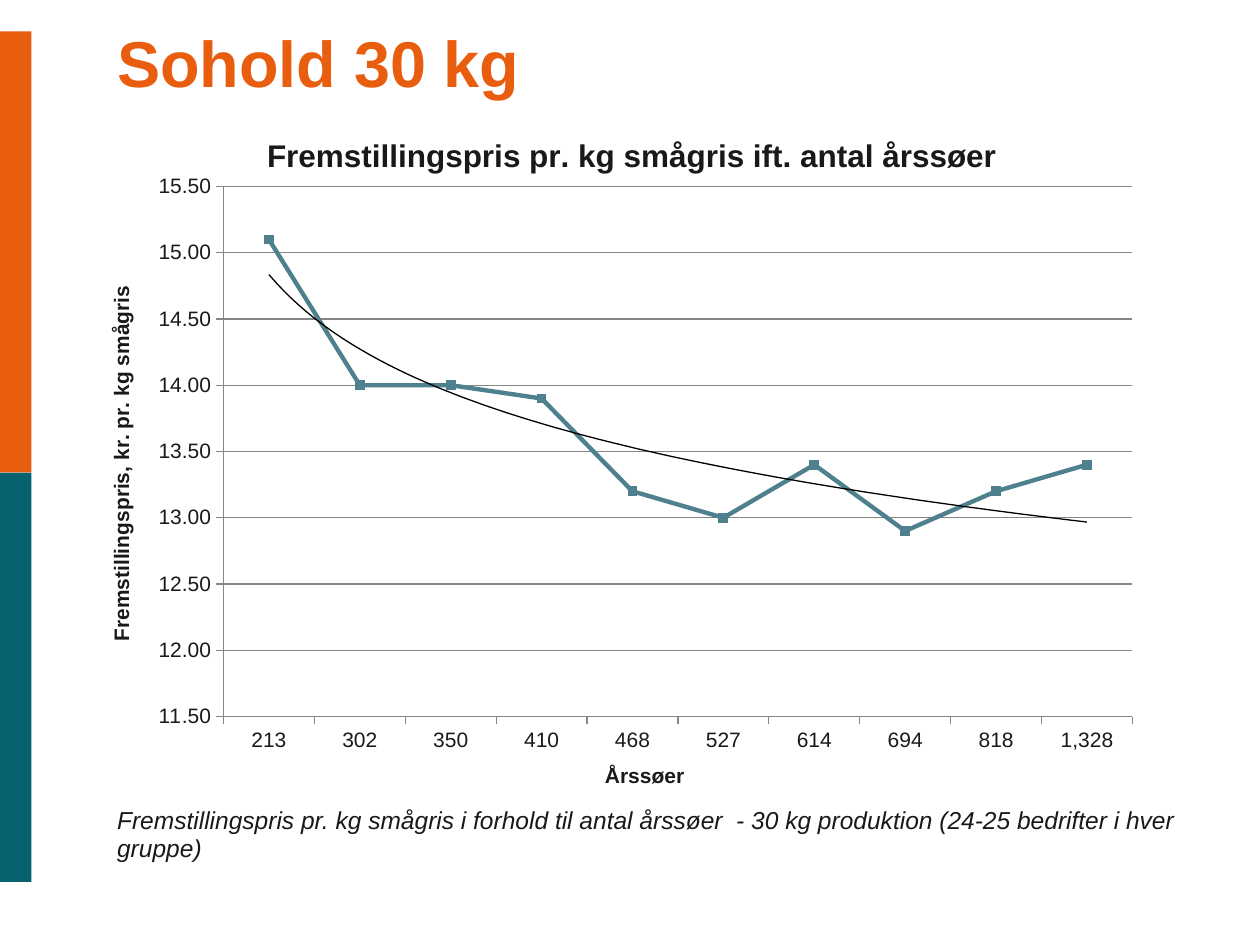
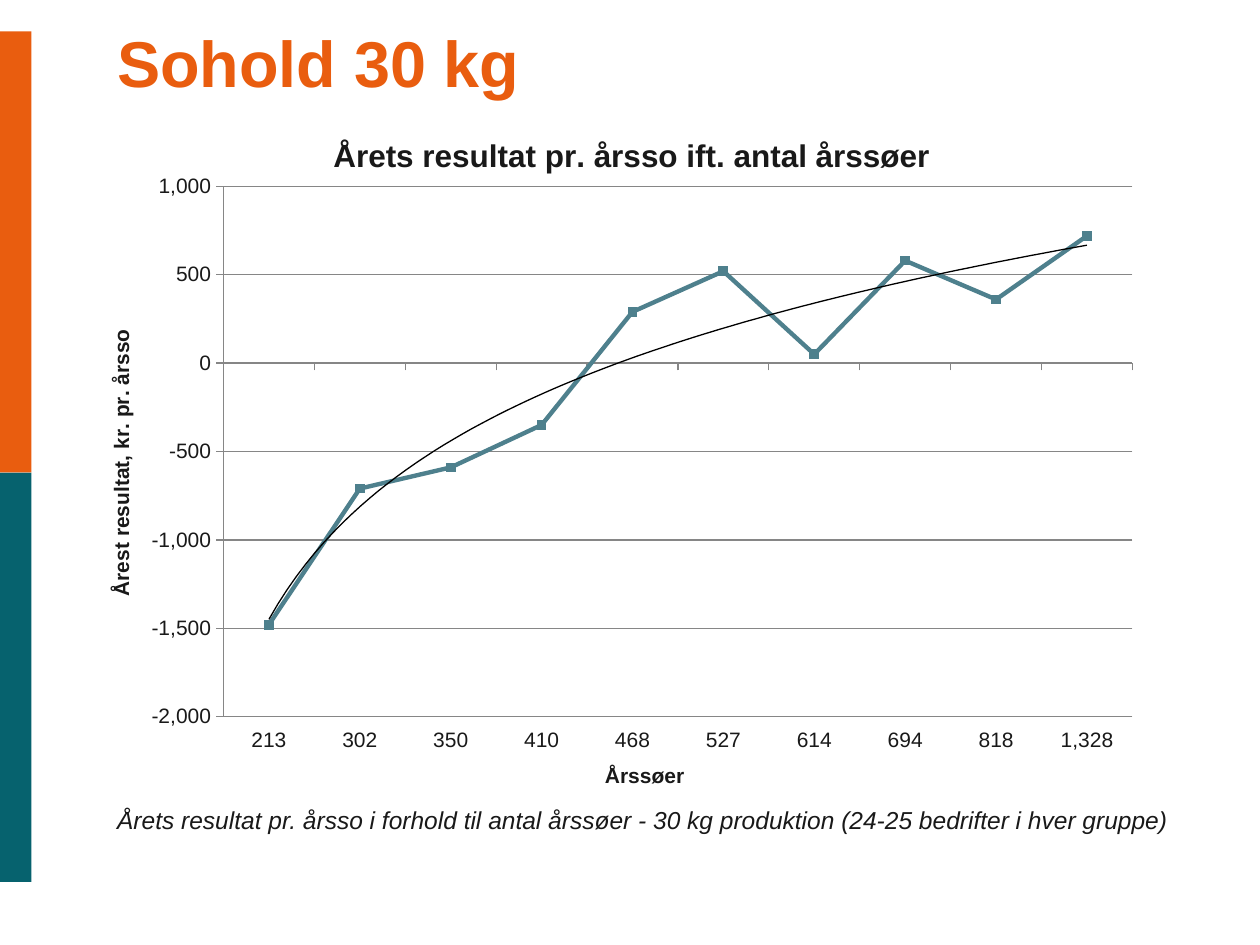
from lxml import etree
from pptx import Presentation
from pptx import util as u
from pptx.chart.data import CategoryChartData
from pptx.dml.color import RGBColor
from pptx.enum import chart as ch, shapes, text
from pptx.oxml import parse_xml
from pptx.oxml.ns import nsdecls, qn

COLORS = {"orange": "E95D0F", "teal": "06626E", "ink": "191919",
          "series": "4E808D", "grid": "868686", "trend": "000000"}
FONT = "Arial"
WIDTH, HEIGHT = u.Inches(10), u.Inches(7.5)
LEFT = 0.093
YEAR_SOWS = ["213", "302", "350", "410", "468", "527", "614", "694", "818", "1,328"]
SLIDES = [
    dict(heading="Fremstillingspris pr. kg smågris ift. antal årssøer", heading_left=0.149,
         value_title="Fremstillingspris, kr. pr. kg smågris", value_title_top=0.261,
         values=[15.1, 14, 14, 13.9, 13.2, 13, 13.4, 12.9, 13.2, 13.4],
         scale=(11.5, 15.5, 0.5), number_format="0.00",
         caption="Fremstillingspris pr. kg smågris i forhold til antal årssøer  "
                 "- 30 kg produktion (24-25 bedrifter i hver gruppe)"),
    dict(heading="Årets resultat pr. årsso ift. antal årssøer", heading_left=0.212,
         value_title="Årest resultat, kr. pr. årsso", value_title_top=0.324,
         values=[-1480, -710, -590, -350, 290, 520, 50, 580, 360, 720],
         scale=(-2000, 1000, 500), number_format="#,##0",
         caption="Årets resultat pr. årsso i forhold til antal årssøer "
                 "- 30 kg produktion (24-25 bedrifter i hver gruppe)"),
]


def color(name):
    """Return a named colour."""
    return RGBColor.from_string(COLORS[name])


def area(left, top, width, height):
    """Turn shares of the slide into lengths."""
    return (u.Emu(int(WIDTH * left)), u.Emu(int(HEIGHT * top)),
            u.Emu(int(WIDTH * width)), u.Emu(int(HEIGHT * height)))


def style_font(font, size, ink="ink", bold=False, italic=False):
    """Apply the deck's font with a size and colour."""
    font.name, font.size = FONT, u.Pt(size)
    font.bold, font.italic = bold, italic
    font.color.rgb = color(ink)


def style_line(line, ink, width):
    """Set a line's colour and width in points."""
    line.color.rgb = color(ink)
    line.width = u.Pt(width)


def write(frame, words, size, spacing, **style):
    """Write one styled run into a text frame without margins."""
    frame.margin_left = frame.margin_right = frame.margin_top = frame.margin_bottom = 0
    frame.word_wrap = True
    frame.auto_size = text.MSO_AUTO_SIZE.NONE
    para = frame.paragraphs[0]
    para.alignment = text.PP_ALIGN.LEFT
    para.line_spacing = spacing
    span = para.add_run()
    span.text = words
    style_font(span.font, size, **style)


def add_band(page, top, height, fill):
    """Add a coloured band along the left edge."""
    band = page.shapes.add_shape(shapes.MSO_SHAPE.RECTANGLE, *area(0, top, 0.025, height))
    band.shadow.inherit = False
    band.fill.solid()
    band.fill.fore_color.rgb = color(fill)
    band.line.fill.background()


def add_title(page, words):
    """Place and fill the title placeholder."""
    title = page.shapes.title
    title.left, title.top, title.width, title.height = area(LEFT, 0.039, 0.572, 0.067)
    title.text_frame.vertical_anchor = text.MSO_ANCHOR.MIDDLE
    write(title.text_frame, words, 37, 0.81, ink="orange", bold=True)


def add_caption(page, words):
    """Add the italic caption under the chart."""
    box = page.shapes.add_textbox(*area(LEFT, 0.855, 0.887, 0.065))
    write(box.text_frame, words, 14, 0.93, italic=True)


def set_layout(element, inner=False, **shares):
    """Place a chart part by shares of the chart's size."""
    layout = element.find(qn("c:layout"))
    if layout is None:
        layout = parse_xml(f"<c:layout {nsdecls('c')}/>")
        element.insert(0, layout)
    manual = etree.SubElement(layout, qn("c:manualLayout"))
    if inner:
        etree.SubElement(manual, qn("c:layoutTarget")).set("val", "inner")
    for side in "xy":
        etree.SubElement(manual, qn(f"c:{side}Mode")).set("val", "edge")
    for side, share in shares.items():
        etree.SubElement(manual, qn(f"c:{side}")).set("val", str(share))


def set_heading(title, words, size, **shares):
    """Write and place a chart or axis title."""
    span = title.text_frame.paragraphs[0].add_run()
    span.text = words
    style_font(span.font, size, bold=True)
    set_layout(title._element, **shares)


def add_log_trend(series):
    """Add a thin logarithmic trend line to a series."""
    trend = parse_xml(
        f"<c:trendline {nsdecls('c', 'a')}><c:spPr><a:ln w='9525'><a:solidFill>"
        f"<a:srgbClr val='{COLORS['trend']}'/></a:solidFill></a:ln></c:spPr>"
        "<c:trendlineType val='log'/><c:dispRSqr val='0'/><c:dispEq val='0'/></c:trendline>")
    series._element.find(qn("c:cat")).addprevious(trend)


def style_series(series):
    """Format the line and its square markers, and add the trend."""
    series.smooth = False
    style_line(series.format.line, "series", 2.5)
    marker = series.marker
    marker.style, marker.size = ch.XL_MARKER_STYLE.SQUARE, 5
    marker.format.fill.solid()
    marker.format.fill.fore_color.rgb = color("series")
    style_line(marker.format.line, "series", 0.75)
    add_log_trend(series)


def style_axis(axis, words, **shares):
    """Format an axis with its title."""
    axis.major_tick_mark = ch.XL_TICK_MARK.OUTSIDE
    axis.minor_tick_mark = ch.XL_TICK_MARK.NONE
    axis.tick_label_position = ch.XL_TICK_LABEL_POSITION.LOW
    style_font(axis.tick_labels.font, 12)
    style_line(axis.format.line, "grid", 0.75)
    set_heading(axis.axis_title, words, 12, **shares)


def add_trend_chart(page, heading, heading_left, value_title, value_title_top,
                    values, scale, number_format):
    """Add a line chart of values by number of year sows."""
    table = CategoryChartData(number_format=number_format)
    table.categories = YEAR_SOWS
    table.add_series("Series 1", values)
    chart = page.shapes.add_chart(ch.XL_CHART_TYPE.LINE_MARKERS,
                                  *area(0.083, 0.112, 0.835, 0.728), table).chart
    style_font(chart.font, 10)
    chart.has_legend = False
    chart.plots[0].vary_by_categories = False
    set_heading(chart.chart_title, heading, 18, x=heading_left, y=0.034)
    set_layout(chart._chartSpace.chart.plotArea, inner=True, x=0.113, y=0.118, w=0.864, h=0.776)
    style_axis(chart.category_axis, "Årssøer", x=0.472, y=0.956)
    axis = chart.value_axis
    style_axis(axis, value_title, x=0, y=value_title_top)
    axis.minimum_scale, axis.maximum_scale, axis.major_unit = scale
    axis.tick_labels.number_format = number_format
    axis.tick_labels.number_format_is_linked = False
    style_line(axis.major_gridlines.format.line, "grid", 0.75)
    style_series(chart.plots[0].series[0])


def add_page(deck, caption, **chart):
    """Add one slide with bands, title, chart and caption."""
    page = deck.slides.add_slide(deck.slide_layouts[5])
    add_band(page, 1 / 2, 13 / 30, "teal")
    add_band(page, 1 / 30, 7 / 15, "orange")
    add_title(page, "Sohold 30 kg")
    add_caption(page, caption)
    add_trend_chart(page, **chart)


def main():
    """Build and save the deck."""
    deck = Presentation()
    deck.slide_width, deck.slide_height = WIDTH, HEIGHT
    for content in SLIDES:
        add_page(deck, **content)
    deck.save("out.pptx")


if __name__ == "__main__":
    main()
